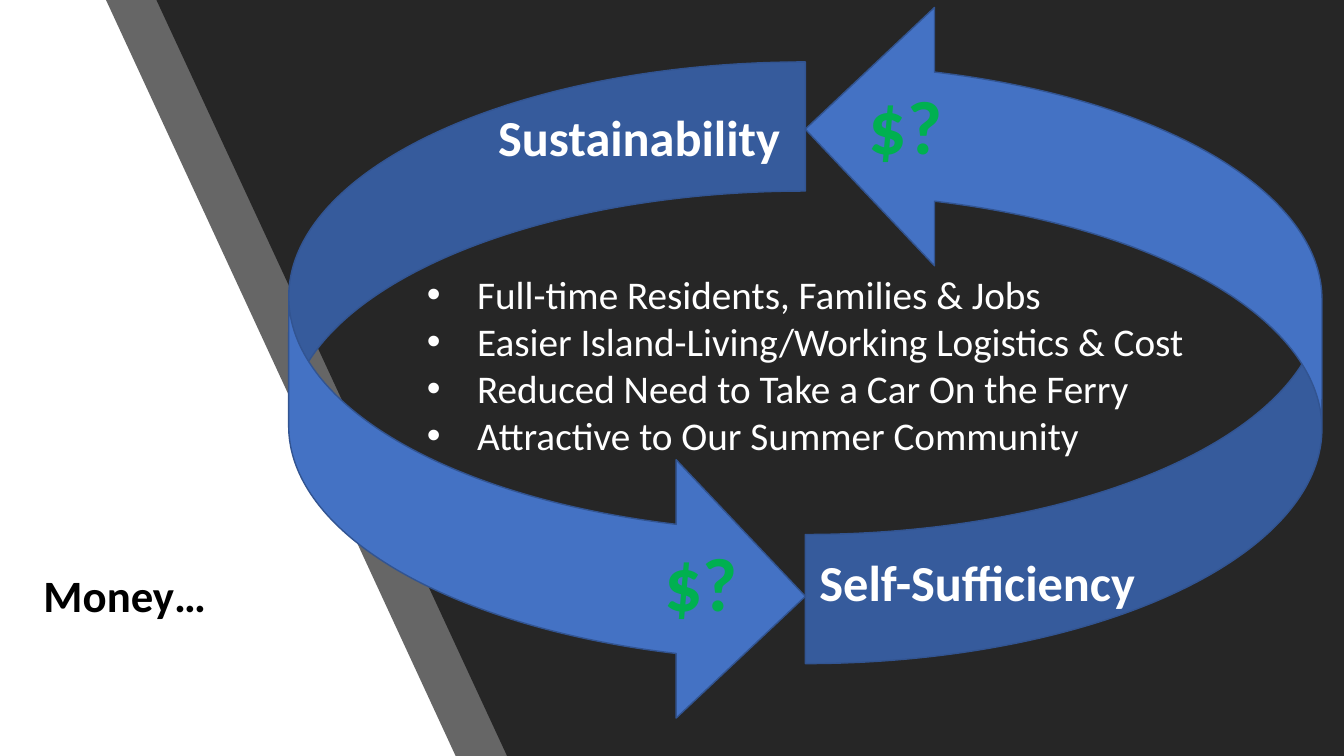
from lxml.etree import Element, SubElement
from pptx import Presentation
from pptx.dml.color import RGBColor
from pptx.enum.shapes import MSO_SHAPE
from pptx.enum.text import PP_ALIGN
from pptx.oxml.ns import qn
from pptx.util import Pt

PX = 9525
W, H = 1280, 720
FONT = "Calibri"
COLORS = {
    "back": "000000", "white": "FFFFFF", "dark": "262626", "black": "000000",
    "arrow": "4472C4", "edge": "325491", "money": "00B050", "halo": "E7E6E6",
}
BENEFITS = [
    "Full-time Residents, Families & Jobs",
    "Easier Island-Living/Working Logistics & Cost",
    "Reduced Need to Take a Car On the Ferry",
    "Attractive to Our Summer Community",
]


def rgb(name):
    """Return the named colour."""
    return RGBColor.from_string(COLORS[name])


def paint(sp, fill, line=None):
    """Give a shape a solid fill, an optional outline and no shadow."""
    sp.shadow.inherit = False
    sp.fill.solid()
    sp.fill.fore_color.rgb = rgb(fill)
    if line:
        sp.line.color.rgb = rgb(line)
        sp.line.width = Pt(1)
    else:
        sp.line.fill.background()


def add_panel(s, box, top_inset, bottom_inset, alpha=None):
    """Fill a box with a dark panel whose left side slants."""
    x, y, w, h = box
    fb = s.shapes.build_freeform(x + w, y + h, scale=PX)
    fb.add_line_segments([(x + bottom_inset, y + h), (x + top_inset, y), (x + w, y)])
    sp = fb.convert_to_shape()
    paint(sp, "dark")
    if alpha:
        clr = sp._element.spPr.find(qn("a:solidFill"))[0]
        SubElement(clr, qn("a:alpha")).set("val", str(alpha * 1000))


def add_backdrop(s, box):
    """Draw the white sheet and the two slanted panels."""
    s.background.fill.solid()
    s.background.fill.fore_color.rgb = rgb("back")
    paint(s.shapes.add_shape(MSO_SHAPE.RECTANGLE, *[v * PX for v in box]), "white")
    add_panel(s, box, 101, 434, alpha=70)
    add_panel(s, box, 149, 483)


def add_text(s, box, lines, size, color="white", bold=False, align=PP_ALIGN.LEFT):
    """Write one paragraph per line in a box and return the paragraphs."""
    tf = s.shapes.add_textbox(*[v * PX for v in box]).text_frame
    tf.word_wrap = True
    for i, line in enumerate(lines):
        p = tf.paragraphs[0] if i == 0 else tf.add_paragraph()
        p.alignment = align
        r = p.add_run()
        r.text = line
        r.font.name = FONT
        r.font.size = Pt(size)
        r.font.bold = bold
        r.font.color.rgb = rgb(color)
    return tf.paragraphs


def add_bullets(s, box, lines):
    """Write a bulleted list in a box."""
    for p in add_text(s, box, lines, 28):
        pPr = p._p.get_or_add_pPr()
        pPr.set("marL", str(48 * PX))
        pPr.set("indent", str(-48 * PX))
        SubElement(pPr, qn("a:buFont")).set("typeface", "Arial")
        SubElement(pPr, qn("a:buChar")).set("char", "•")


def add_money_mark(s, box):
    """Write the outlined money question in a box."""
    p = add_text(s, box, ["$?"], 54, "money", True, PP_ALIGN.CENTER)[0]
    ln = Element(qn("a:ln"), w=str(int(Pt(1))))
    fill = SubElement(ln, qn("a:solidFill"))
    SubElement(fill, qn("a:srgbClr")).set("val", COLORS["halo"])
    p.runs[0]._r.get_or_add_rPr().insert(0, ln)


def add_arrow(s, box, rotation=0):
    """Draw one half of the cycle in a box."""
    sp = s.shapes.add_shape(MSO_SHAPE.CURVED_RIGHT_ARROW, *[v * PX for v in box])
    sp.rotation = rotation
    paint(sp, "arrow", "edge")


def add_cycle(s, box):
    """Draw the two-arrow cycle with its labels and list."""
    x, y, w, h = box
    half, arrow_h = w // 2, h - 59
    add_arrow(s, (x, y + 59, half, arrow_h))
    add_text(s, (x + 190, y + 96, 321, 68), ["Sustainability"], 36, bold=True)
    add_bullets(s, (x + 122, y + 253, 766, 191), BENEFITS)
    add_arrow(s, (x + half, y, half, arrow_h), 180)
    add_text(s, (x + 496, y + 520, 408, 68), ["Self-Sufficiency"], 36, bold=True)
    for dx, dy in ((510, 70), (315, 506)):
        add_money_mark(s, (x + dx, y + dy, 155, 97))


def main():
    """Build and save the slide."""
    prs = Presentation()
    prs.slide_width, prs.slide_height = W * PX, H * PX
    s = prs.slides.add_slide(prs.slide_layouts[6])
    add_backdrop(s, (0, 0, W, H))
    add_text(s, (32, 536, 433, 61), ["Money…"], 32, "black", True)
    add_cycle(s, (275, 0, 984, 691))
    prs.save("out.pptx")


if __name__ == "__main__":
    main()
